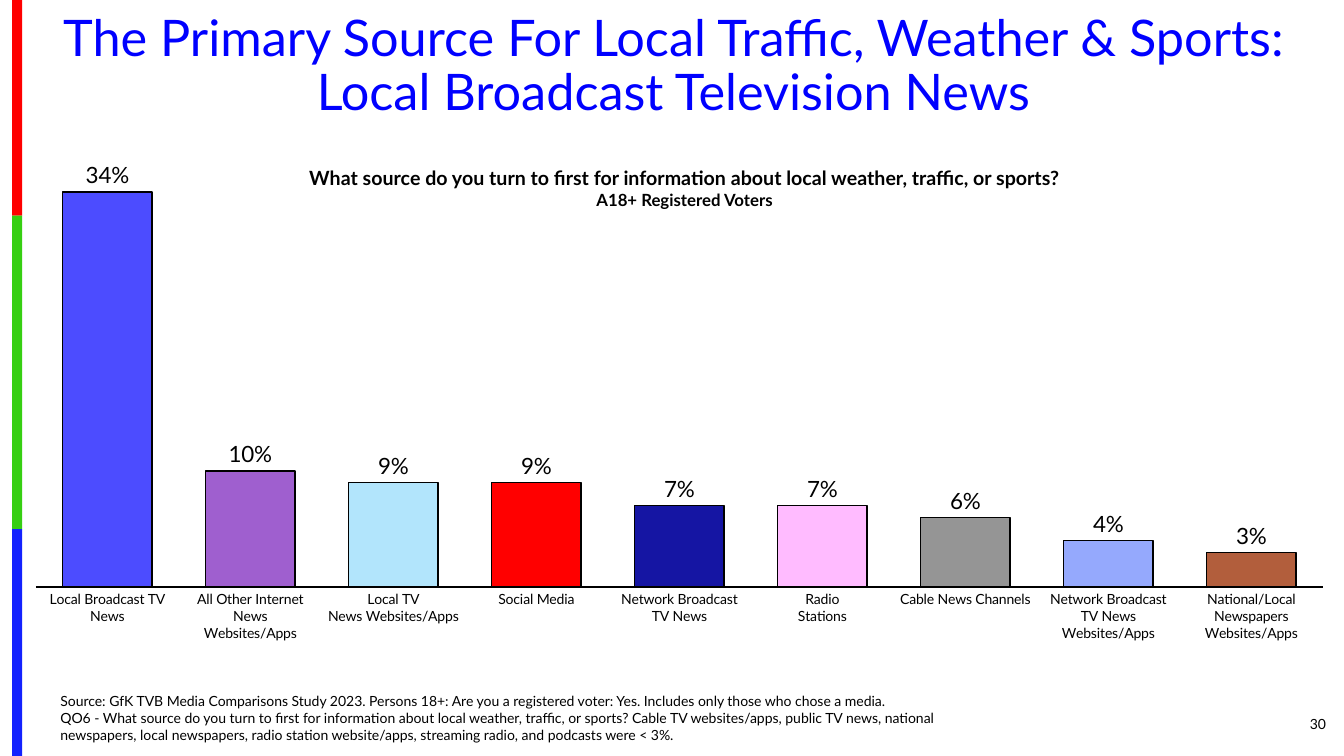
from pptx import Presentation
from pptx.chart.data import CategoryChartData
from pptx.dml.color import RGBColor
from pptx.enum.chart import XL_CHART_TYPE as ChartType, XL_LABEL_POSITION as LabelPos, XL_TICK_MARK as Tick
from pptx.enum.shapes import MSO_SHAPE as Shape
from pptx.enum.text import MSO_ANCHOR as Anchor, PP_ALIGN as Align
from pptx.oxml import parse_xml
from pptx.oxml.ns import nsdecls
from pptx.util import Inches, Pt

FONT = "Lato"
BLACK = RGBColor(0x00, 0x00, 0x00)
TITLE_BLUE = RGBColor(0x00, 0x00, 0xFF)
RED = RGBColor(0xFE, 0x00, 0x00)
GREEN = RGBColor(0x36, 0xCF, 0x12)
BLUE = RGBColor(0x13, 0x22, 0xFE)

# Content
TITLE = ["The Primary Source For Local Traffic, Weather & Sports:",
         "Local Broadcast Television News"]
QUESTION = "What source do you turn to first for information about local weather, traffic, or sports?"
AUDIENCE = "A18+ Registered Voters"
SOURCE = [
    "Source: GfK TVB Media Comparisons Study 2023. Persons 18+: Are you a registered voter: Yes. "
    "Includes only those who chose a media.",
    "QO6 - What source do you turn to first for information about local weather, traffic, or sports? "
    "Cable TV websites/apps, public TV news, national newspapers, local newspapers, "
    "radio station website/apps, streaming radio, and podcasts were < 3%.",
]
PAGE = "30"
NEWS_SOURCES = [  # name, share, bar colour
    ("Local Broadcast TV News", 0.34, RGBColor(0x4C, 0x4C, 0xFF)),
    ("All Other Internet\nNews\nWebsites/Apps", 0.10, RGBColor(0x9F, 0x5F, 0xCF)),
    ("Local TV\nNews Websites/Apps", 0.09, RGBColor(0xB2, 0xE5, 0xFC)),
    ("Social Media", 0.09, RGBColor(0xFF, 0x00, 0x00)),
    ("Network Broadcast TV News", 0.07, RGBColor(0x15, 0x15, 0xA3)),
    ("Radio\nStations", 0.07, RGBColor(0xFF, 0xBB, 0xFF)),
    ("Cable News Channels", 0.06, RGBColor(0x95, 0x95, 0x95)),
    ("Network Broadcast TV News Websites/Apps", 0.04, RGBColor(0x95, 0xA9, 0xFD)),
    ("National/Local Newspapers Websites/Apps", 0.03, RGBColor(0xB2, 0x5E, 0x3C)),
]
STRIPES = [(RED, 2.14), (GREEN, 3.11), (BLUE, 2.25)]  # colour, height
PLOT_AREA = {"x": 0.002, "y": 0.087, "w": 0.988, "h": 0.751}

prs = Presentation()
prs.slide_width, prs.slide_height = Inches(13.33), Inches(7.5)
slide = prs.slides.add_slide(prs.slide_layouts[6])


def style_font(font, size, color=BLACK, bold=False):
    font.name, font.size, font.bold = FONT, Pt(size), bold
    font.color.rgb = color


def add_text(box, paragraphs, align=Align.LEFT, anchor=Anchor.TOP, spacing=None):
    """Each paragraph is (lines, size, colour, bold)."""
    frame = slide.shapes.add_textbox(*map(Inches, box)).text_frame
    frame.word_wrap, frame.vertical_anchor = True, anchor
    for i, (lines, size, color, bold) in enumerate(paragraphs):
        para = frame.add_paragraph() if i else frame.paragraphs[0]
        para.alignment, para.line_spacing = align, spacing
        for j, line in enumerate(lines):
            if j:
                para.add_line_break()
            run = para.add_run()
            run.text = line
            style_font(run.font, size, color, bold)


# Stripes down the left edge
stripe_top = 0
for color, height in STRIPES:
    stripe = slide.shapes.add_shape(
        Shape.RECTANGLE, Inches(0.12), Inches(stripe_top), Inches(0.1), Inches(height))
    stripe.shadow.inherit = False
    stripe.fill.solid()
    stripe.fill.fore_color.rgb = color
    stripe.line.fill.background()
    stripe_top += height

# Chart
data = CategoryChartData(number_format="0%")
data.categories = [name for name, _, _ in NEWS_SOURCES]
data.add_series("Series 1", [share for _, share, _ in NEWS_SOURCES])
chart = slide.shapes.add_chart(
    ChartType.COLUMN_CLUSTERED, Inches(0.33), Inches(0.68), Inches(12.92), Inches(6.14), data).chart
chart.has_title = chart.has_legend = False
style_font(chart.font, 10)

shares = chart.value_axis
shares.minimum_scale, shares.maximum_scale = 0, 0.4
shares.has_major_gridlines = shares.visible = False

names = chart.category_axis
names.major_tick_mark = names.minor_tick_mark = Tick.NONE
names.format.line.color.rgb = BLACK
names.format.line.width = Pt(1.5)
style_font(names.tick_labels.font, 10)

plot = chart.plots[0]
plot.gap_width, plot.vary_by_categories = 60, False
bars = plot.series[0]
for i, (_, _, color) in enumerate(NEWS_SOURCES):
    bar = bars.points[i].format
    bar.fill.solid()
    bar.fill.fore_color.rgb = color
    bar.line.color.rgb = BLACK
    bar.line.width = Pt(1)

labels = bars.data_labels
labels.show_value, labels.position = True, LabelPos.OUTSIDE_END
labels.number_format, labels.number_format_is_linked = "0%", False
style_font(labels.font, 16)

# Fixed inner plot area
plot_area = chart._chartSpace.chart.plotArea
for layout in plot_area.findall("{*}layout"):
    plot_area.remove(layout)
modes = '<c:layoutTarget val="inner"/><c:xMode val="edge"/><c:yMode val="edge"/>'
extent = "".join(f'<c:{key} val="{value}"/>' for key, value in PLOT_AREA.items())
plot_area.insert(0, parse_xml(
    f'<c:layout {nsdecls("c")}><c:manualLayout>{modes}{extent}</c:manualLayout></c:layout>'))

# Text
add_text((12.17, 6.98, 1.08, 0.4), [([PAGE], 10, BLACK, False)], Align.RIGHT, Anchor.MIDDLE)
add_text((0.5, 6.81, 9.08, 0.61), [(SOURCE, 10, BLACK, False)], anchor=Anchor.BOTTOM)
add_text((0.37, 0.08, 12.62, 1.19), [(TITLE, 36, TITLE_BLUE, False)], Align.CENTER, spacing=0.9)
add_text((2, 1.6, 9.58, 0.54),
         [([QUESTION], 14, BLACK, True), ([AUDIENCE], 12, BLACK, True)], Align.CENTER)

prs.save("out.pptx")
